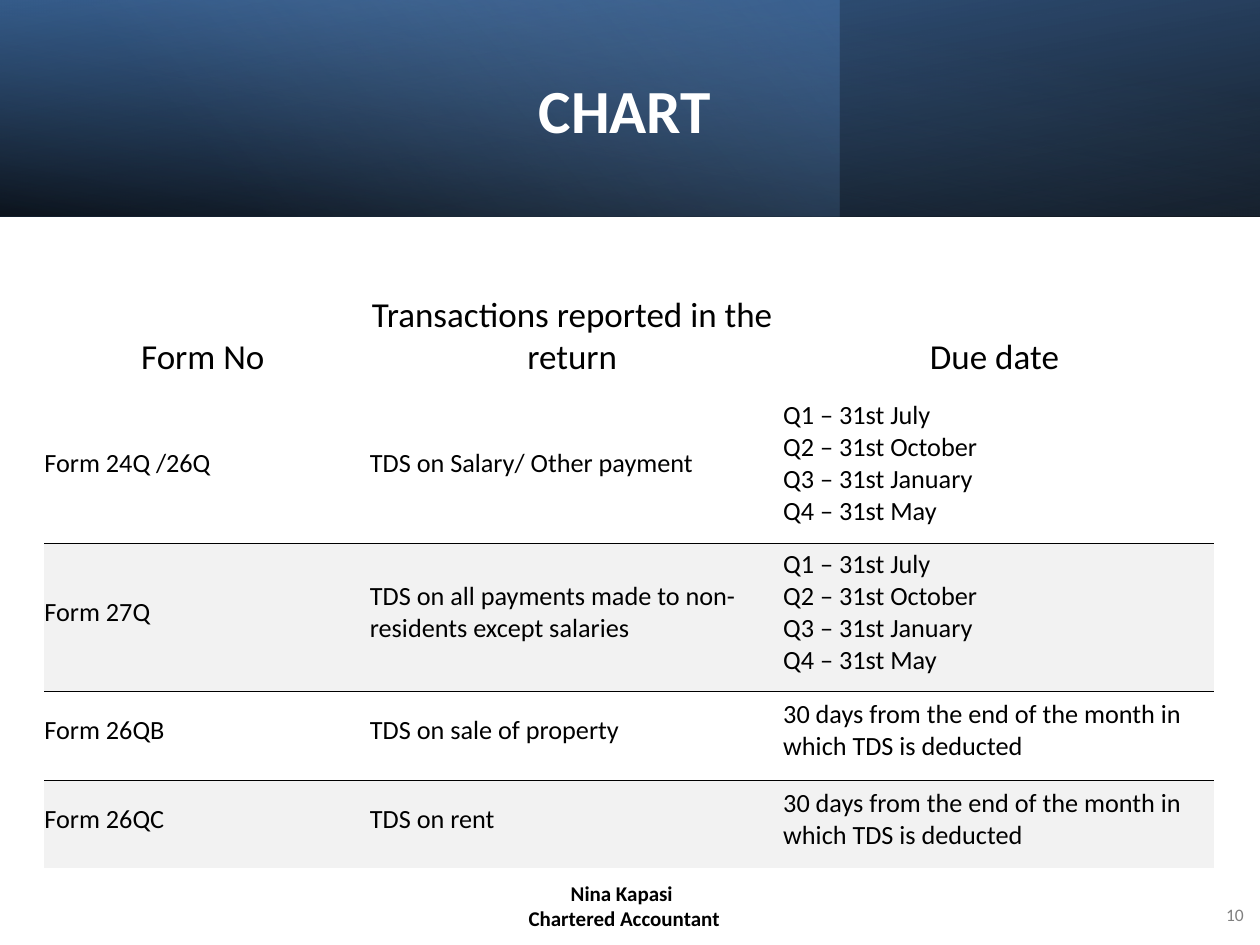
from lxml import etree
from pptx import Presentation
from pptx import util as u
from pptx.dml import color
from pptx.enum import shapes, text
from pptx.oxml import ns

COLORS = {"black": "000000", "white": "FFFFFF", "navy": "376092", "blue": "4F81BD",
          "sky": "95B3D7", "stripe": "F2F2F2", "gray": "808080"}
CENTER, LEFT, RIGHT = text.PP_ALIGN.CENTER, text.PP_ALIGN.LEFT, text.PP_ALIGN.RIGHT
MIDDLE, BOTTOM = text.MSO_ANCHOR.MIDDLE, text.MSO_ANCHOR.BOTTOM
QUARTERS = "Q1 – 31st July\nQ2 – 31st October\nQ3 – 31st January\nQ4 – 31st May"
MONTH_END = "30 days from the end of the month in which TDS is deducted"
ROWS = [
    ("Form No", "Transactions reported in the return", "Due date"),
    ("Form 24Q /26Q", "TDS on Salary/ Other payment", QUARTERS),
    ("Form 27Q", "TDS on all payments made to non-residents except salaries", QUARTERS),
    ("Form 26QB", "TDS on sale of property", MONTH_END),
    ("Form 26QC", "TDS on rent", MONTH_END),
]
COLUMN_WIDTHS = (186, 236.2, 246.4)
ROW_HEIGHTS = (61.2, 85, 85, 50.4, 50.4)
NO_STYLE = "{2D5ABB26-0587-4C30-8999-92F81FD0307C}"


def rgb(name):
    """Return the named colour."""
    return color.RGBColor.from_string(COLORS[name])


def write(para, words, size=15, ink="black", bold=False, align=LEFT, spacing=None):
    """Fill a paragraph with formatted words, breaking lines at newlines."""
    para.alignment = align
    para.line_spacing = spacing
    for index, line in enumerate(words.split("\n")):
        if index:
            para.add_line_break()
        span = para.add_run()
        span.text = line
        span.font.name = "Calibri"
        span.font.size = u.Pt(size)
        span.font.bold = bold
        span.font.color.rgb = rgb(ink)
    for line_break in para._p.findall(ns.qn("a:br")):
        etree.SubElement(line_break, ns.qn("a:rPr"), sz=str(size * 100))


def place(box, left, top, width, height):
    """Set the position and size of a box in points."""
    box.left, box.top = u.Pt(left), u.Pt(top)
    box.width, box.height = u.Pt(width), u.Pt(height)


def add_gradient(page, box, stops, angle, flip=False, rotation=0):
    """Add a rectangle with stops of (position, colour, opacity) percentages."""
    panel = page.shapes.add_shape(shapes.MSO_SHAPE.RECTANGLE, *map(u.Pt, box))
    panel.shadow.inherit = False
    panel.line.fill.background()
    panel.rotation = rotation
    if flip:
        panel._element.spPr.find(ns.qn("a:xfrm")).set("flipH", "1")
    panel.fill.gradient()
    panel.fill.gradient_angle = 360 - angle
    for stop, (position, name, opacity) in zip(panel.fill.gradient_stops, stops):
        stop.position = position / 100
        stop.color.rgb = rgb(name)
    inks = panel._element.spPr.iter(ns.qn("a:srgbClr"))
    for ink, (position, name, opacity) in zip(inks, stops):
        etree.SubElement(ink, ns.qn("a:alpha"), val=str(opacity * 1000))


def add_banner(page, left, top, width, height):
    """Layer the gradient banner and set the title on it."""
    full = (left, top, width, height)
    add_gradient(page, full, [(0, "black", 96), (100, "navy", 100)], 100, True, 180)
    add_gradient(page, (left, top, width * 2 / 3, height),
                 [(0, "blue", 41), (74, "sky", 0)], 140)
    add_gradient(page, full, [(0, "black", 63), (78, "blue", 15)], 260, True)
    title = page.shapes.title
    page.shapes._spTree.append(title._element)
    place(title, left + 14.4, top + 19.4, 685.4, 91.4)
    title.text_frame.vertical_anchor = MIDDLE
    write(title.text_frame.paragraphs[0], "CHART", size=35, ink="white", bold=True,
          align=CENTER, spacing=0.9)


def add_rule(cell, side):
    """Draw a thin black border on one side of a cell."""
    rule = etree.Element(ns.qn("a:" + side), w=str(u.Pt(0.75)))
    fill = etree.SubElement(rule, ns.qn("a:solidFill"))
    etree.SubElement(fill, ns.qn("a:srgbClr"), val=COLORS["black"])
    cell._tc.get_or_add_tcPr().insert(0, rule)


def fill_cell(cell, words, row):
    """Write and format one cell according to its row number."""
    header, striped = row == 0, row > 0 and row % 2 == 0
    cell.margin_left, cell.margin_right = u.Pt(0), u.Pt(5)
    cell.margin_top, cell.margin_bottom = u.Pt(1.4 if header else 2.8), u.Pt(8.6)
    cell.vertical_anchor = BOTTOM if header else MIDDLE
    write(cell.text_frame.paragraphs[0], words, size=20 if header else 15,
          align=CENTER if header else LEFT)
    if striped:
        cell.fill.solid()
        cell.fill.fore_color.rgb = rgb("stripe")
    else:
        cell.fill.background()
    if not header:
        add_rule(cell, "lnT" if striped else "lnB")


def add_forms_table(page, left, top):
    """Add the table of forms and due dates."""
    frame = page.shapes.add_table(
        len(ROWS), len(COLUMN_WIDTHS), u.Pt(left), u.Pt(top),
        u.Pt(sum(COLUMN_WIDTHS)), u.Pt(sum(ROW_HEIGHTS)))
    table = frame.table
    table.first_row = table.horz_banding = False
    table._tbl.tblPr.find(ns.qn("a:tableStyleId")).text = NO_STYLE
    for column, width in zip(table.columns, COLUMN_WIDTHS):
        column.width = u.Pt(width)
    for row, (height, entries) in enumerate(zip(ROW_HEIGHTS, ROWS)):
        table.rows[row].height = u.Pt(height)
        for column, words in enumerate(entries):
            fill_cell(table.cell(row, column), words, row)


def add_label(page, box, lines, **style):
    """Add a text box with one paragraph for each line."""
    frame = page.shapes.add_textbox(*map(u.Pt, box)).text_frame
    frame.word_wrap = True
    frame.vertical_anchor = MIDDLE
    for index, line in enumerate(lines):
        para = frame.add_paragraph() if index else frame.paragraphs[0]
        write(para, line, **style)


def add_footer(page, left, top, width, height):
    """Add the author lines and the page number."""
    add_label(page, (left + 242.6, top, 228.2, height),
              ["Nina Kapasi\u00a0", "Chartered Accountant"], size=12, bold=True, align=CENTER)
    add_label(page, (left + width - 28.8, top + 5, 26.6, height), ["10"],
              size=10, ink="gray", align=RIGHT)


def main():
    """Build and save the deck."""
    deck = Presentation()
    deck.slide_width, deck.slide_height = u.Pt(720), u.Pt(540)
    page = deck.slides.add_slide(deck.slide_layouts[5])
    add_banner(page, 0, 0, 720, 124)
    add_forms_table(page, 25.4, 164.2)
    add_footer(page, 0, 503.3, 720, 28.8)
    deck.save("out.pptx")


if __name__ == "__main__":
    main()
